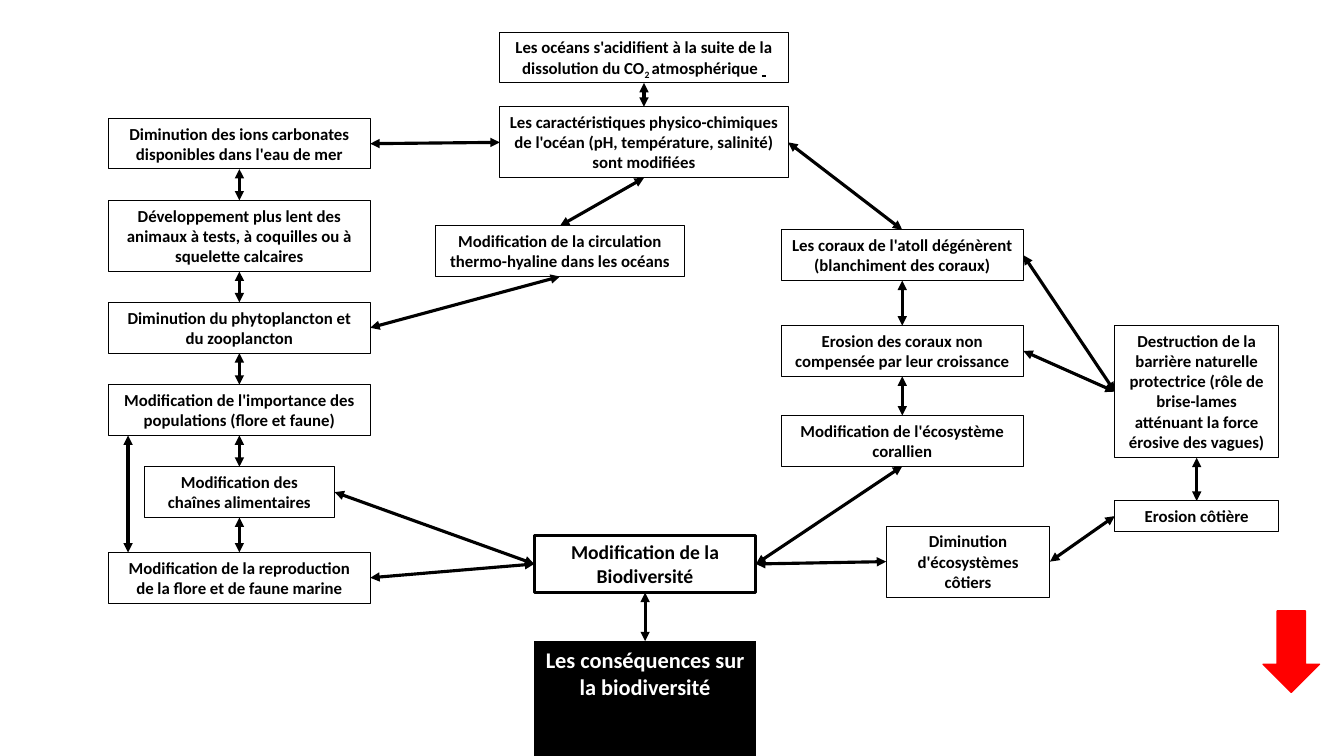
from dataclasses import dataclass
from enum import IntEnum
from typing import NamedTuple

from lxml import etree
from pptx import Presentation
from pptx.dml.color import RGBColor
from pptx.enum.shapes import MSO_CONNECTOR as Connector, MSO_SHAPE as Preset
from pptx.enum.text import MSO_ANCHOR as Anchor, MSO_AUTO_SIZE as AutoSize, PP_ALIGN as Align
from pptx.oxml.ns import qn
from pptx.util import Pt

BLACK, WHITE, RED = "000000", "FFFFFF", "FF0000"
LINE_SPACING = 1.21
VERTICAL_MARGINS = 7.2


class Side(IntEnum):
    TOP = 0
    LEFT = 1
    BOTTOM = 2
    RIGHT = 3


@dataclass(frozen=True)
class Box:
    text: str
    left: float
    top: float
    width: float
    lines: int = 2
    size: float = 12
    border: float = 0.75
    color: str = BLACK

    @property
    def height(self) -> float:
        return round(self.lines * self.size * LINE_SPACING + VERTICAL_MARGINS, 2)


class Link(NamedTuple):
    start: str
    start_side: Side
    end: str
    end_side: Side


CARBON_X, OCEAN_X, CORAL_X, COAST_X, CENTER_X = 77.5, 357, 558, 796.3, 381.6
CARBON_W, OCEAN_W, CORAL_W, COAST_W, CENTER_W = 187, 206, 173, 117, 158.4

CONCLUSION = Box("Les conséquences sur la biodiversité", CENTER_X, 458, CENTER_W,
                 size=16, color=WHITE)
BOXES = {
    "acidification": Box("Les océans s'acidifient à la suite de la dissolution du CO",
                         OCEAN_X, 23, OCEAN_W),
    "océan": Box("Les caractéristiques physico-chimiques de l'océan (pH, température, "
                 "salinité) sont modifiées", OCEAN_X, 76.3, OCEAN_W, lines=3),
    "circulation": Box("Modification de la circulation thermo-hyaline dans les océans",
                       311, 161.3, 178),
    "carbonates": Box("Diminution des ions carbonates disponibles dans l'eau de mer",
                      CARBON_X, 84.5, CARBON_W),
    "coquilles": Box("Développement plus lent des animaux à tests, à coquilles ou à "
                     "squelette calcaires", CARBON_X, 143.2, CARBON_W, lines=3),
    "plancton": Box("Diminution du phytoplancton et du zooplancton",
                    CARBON_X, 216, CARBON_W),
    "populations": Box("Modification de l'importance des populations (flore et faune)",
                       CARBON_X, 274.8, CARBON_W),
    "chaînes": Box("Modification des chaînes alimentaires", 103, 333.4, 136),
    "reproduction": Box("Modification de la reproduction de la flore et de faune marine",
                        CARBON_X, 394.6, CARBON_W),
    "atoll": Box("Les coraux de l'atoll dégénèrent (blanchiment des coraux)",
                 CORAL_X, 164.2, CORAL_W),
    "érosion": Box("Erosion des coraux non compensée par leur croissance",
                   CORAL_X, 232.6, CORAL_W),
    "corallien": Box("Modification de l'écosystème corallien", CORAL_X, 296.8, CORAL_W),
    "barrière": Box("Destruction de la barrière naturelle protectrice (rôle de brise-lames "
                    "atténuant la force érosive des vagues)",
                    COAST_X, 232.6, COAST_W, lines=6),
    "côte": Box("Erosion côtière", COAST_X, 357.8, COAST_W, lines=1),
    "côtiers": Box("Diminution d'écosystèmes côtiers", 633, 375.8, COAST_W, lines=3),
    "biodiversité": Box("Modification de la Biodiversité", CENTER_X, 382.3, CENTER_W,
                        size=14, border=2.25),
}
CHAINS = (
    ("acidification", "océan", "circulation"),
    ("carbonates", "coquilles", "plancton", "populations", "chaînes", "reproduction"),
    ("atoll", "érosion", "corallien"),
    ("barrière", "côte"),
    ("biodiversité", "conclusion"),
)
CROSS_LINKS = (
    Link("carbonates", Side.RIGHT, "océan", Side.LEFT),
    Link("circulation", Side.BOTTOM, "plancton", Side.RIGHT),
    Link("chaînes", Side.RIGHT, "biodiversité", Side.LEFT),
    Link("reproduction", Side.RIGHT, "biodiversité", Side.LEFT),
    Link("océan", Side.RIGHT, "atoll", Side.TOP),
    Link("corallien", Side.BOTTOM, "biodiversité", Side.RIGHT),
    Link("atoll", Side.RIGHT, "barrière", Side.LEFT),
    Link("érosion", Side.RIGHT, "barrière", Side.LEFT),
    Link("biodiversité", Side.RIGHT, "côtiers", Side.LEFT),
    Link("côte", Side.LEFT, "côtiers", Side.RIGHT),
)


def paint(target, color: str) -> None:
    """Make a fill solid in the given hex colour."""
    target.solid()
    target.fore_color.rgb = RGBColor.from_string(color)


def write_box(shape, box: Box) -> None:
    shape.left, shape.top = Pt(box.left), Pt(box.top)
    shape.width, shape.height = Pt(box.width), Pt(box.height)
    frame = shape.text_frame
    frame.text = box.text
    frame.word_wrap = True
    frame.auto_size = AutoSize.SHAPE_TO_FIT_TEXT
    frame.vertical_anchor = Anchor.TOP
    paragraph = frame.paragraphs[0]
    paragraph.alignment = Align.CENTER
    font = paragraph.font
    font.name, font.size, font.bold = "Calibri", Pt(box.size), True
    paint(font.fill, box.color)


def add_box(slide, box: Box):
    shape = slide.shapes.add_textbox(0, 0, 0, 0)
    write_box(shape, box)
    paint(shape.line.fill, BLACK)
    shape.line.width = Pt(box.border)
    return shape


def add_gas_formula(paragraph) -> None:
    """Finish the acidification sentence after "CO"."""
    subscript = paragraph.add_run()
    subscript.text = "2 "
    subscript.font._element.set("baseline", "-25000")
    paragraph.add_run().text = "atmosphérique "
    underlined = paragraph.add_run()
    underlined.text = " "
    underlined.font.underline = True


def add_double_arrow(slide, x1: float = 0, y1: float = 0, x2: float = 0, y2: float = 0):
    arrow = slide.shapes.add_connector(Connector.STRAIGHT, Pt(x1), Pt(y1), Pt(x2), Pt(y2))
    paint(arrow.line.fill, BLACK)
    arrow.line.width = Pt(2.25)
    properties = arrow.element.spPr
    outline = properties.find(qn("a:ln"))
    for end in ("a:headEnd", "a:tailEnd"):
        etree.SubElement(outline, qn(end), type="triangle")
    etree.SubElement(properties, qn("a:effectLst"))
    return arrow


def main() -> None:
    presentation = Presentation()
    presentation.slide_width, presentation.slide_height = Pt(960), Pt(540)
    slide = presentation.slides.add_slide(presentation.slide_layouts[5])

    title = slide.shapes.title
    write_box(title, CONCLUSION)
    paint(title.fill, BLACK)

    shapes = {name: add_box(slide, box) for name, box in BOXES.items()}
    shapes["conclusion"] = title
    add_gas_formula(shapes["acidification"].text_frame.paragraphs[0])

    chain_links = [Link(upper, Side.BOTTOM, lower, Side.TOP)
                   for chain in CHAINS for upper, lower in zip(chain, chain[1:])]
    for link in (*chain_links, *CROSS_LINKS):
        arrow = add_double_arrow(slide)
        arrow.begin_connect(shapes[link.start], link.start_side)
        arrow.end_connect(shapes[link.end], link.end_side)

    populations, reproduction = BOXES["populations"], BOXES["reproduction"]
    bypass_x = CARBON_X + 14
    add_double_arrow(slide, bypass_x, populations.top + populations.height,
                     bypass_x, reproduction.top)

    next_step = slide.shapes.add_shape(Preset.DOWN_ARROW, Pt(902.2), Pt(436.3),
                                       Pt(40.3), Pt(58.3))
    next_step.shadow.inherit = False
    paint(next_step.fill, RED)
    paint(next_step.line.fill, RED)
    next_step.line.width = Pt(1)

    presentation.save("out.pptx")


if __name__ == "__main__":
    main()
